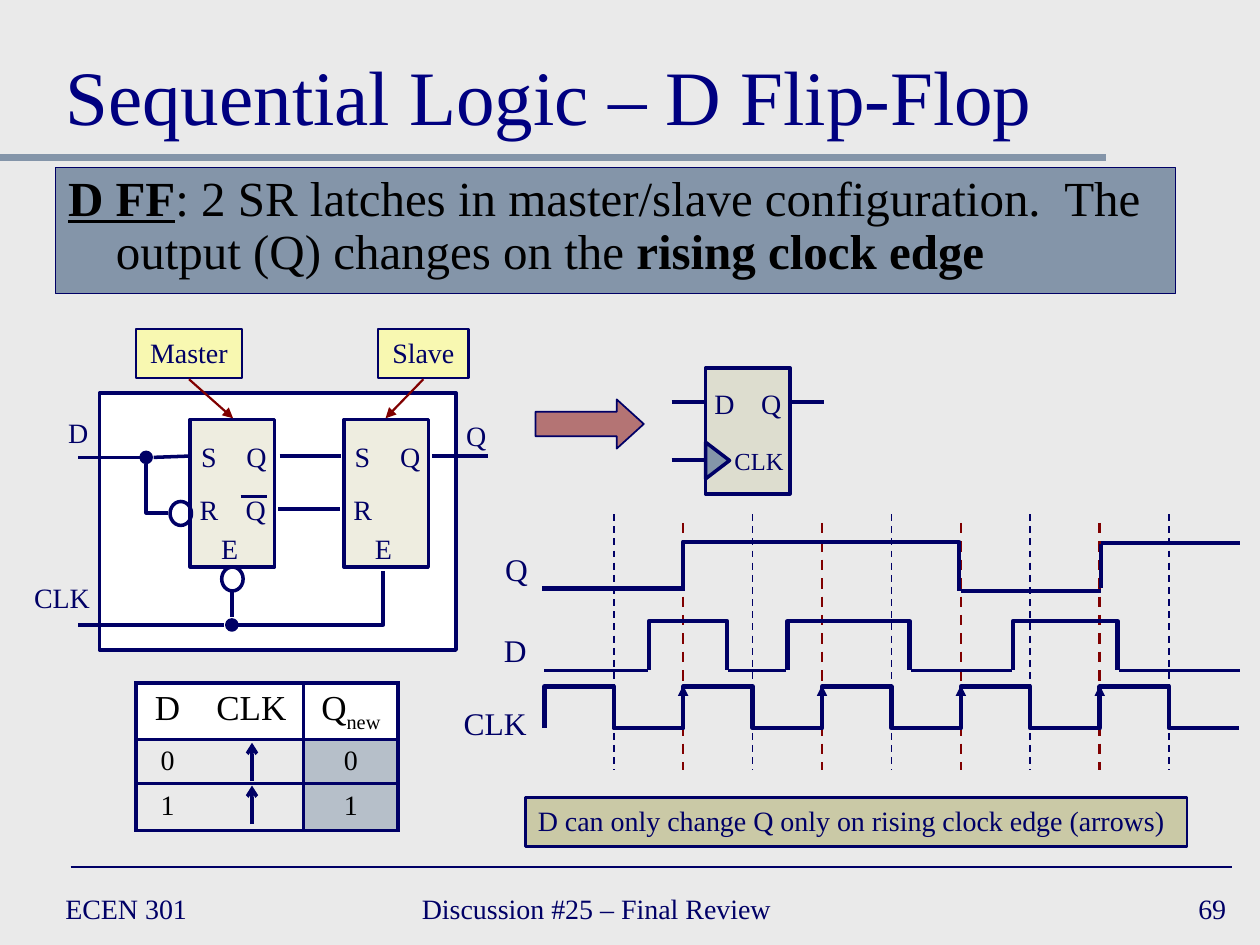
from lxml import etree
from pptx import Presentation
from pptx.dml.color import RGBColor
from pptx.enum.dml import MSO_LINE
from pptx.enum.shapes import MSO_CONNECTOR, MSO_SHAPE
from pptx.enum.text import MSO_ANCHOR, MSO_AUTO_SIZE, PP_ALIGN
from pptx.oxml.ns import qn
from pptx.util import Inches, Pt

RECTANGLE, OVAL = MSO_SHAPE.RECTANGLE, MSO_SHAPE.OVAL
TRIANGLE, RIGHT_ARROW = MSO_SHAPE.ISOSCELES_TRIANGLE, MSO_SHAPE.RIGHT_ARROW
STRAIGHT, DASH = MSO_CONNECTOR.STRAIGHT, MSO_LINE.DASH
LEFT, CENTER, RIGHT = PP_ALIGN.LEFT, PP_ALIGN.CENTER, PP_ALIGN.RIGHT
TOP, MIDDLE, BOTTOM = MSO_ANCHOR.TOP, MSO_ANCHOR.MIDDLE, MSO_ANCHOR.BOTTOM

FONT = "Times New Roman"
COLORS = {"page": "EAEAEA", "navy": "000066", "title": "000080", "slate": "8495A9",
          "maroon": "800000", "olive": "ABA964", "yellow": "FFFF99",
          "white": "FFFFFF", "black": "000000"}
# Letter widths as shares of the text size, for boxes that hug their label
ADVANCE = {"C": 0.67, "D": 0.72, "E": 0.61, "K": 0.72, "L": 0.61,
           "Q": 0.72, "R": 0.67, "S": 0.56}
NO_TABLE_STYLE = "{2D5ABB26-0587-4C30-8999-92F81FD0307C}"

# The slide is a grid of 100 columns and 75 rows; the clock has ten half periods
CELL = Inches(0.1)
CLOCK_LEFT, HALF_PERIOD = 43.2, 5.51


def grid(*values):
    return [round(CELL * value) for value in values]


def clock_column(step):
    return CLOCK_LEFT + HALF_PERIOD * step


def color(name):
    return RGBColor.from_string(COLORS[name])


def add_span(para, text, size, name="navy", bold=None, underline=None):
    span = para.add_run()
    span.text = text
    font = span.font
    font.name, font.size, font.bold, font.underline = FONT, Pt(size), bold, underline
    font.color.rgb = color(name)
    return span


def paint(fill, name, opacity=100):
    fill.solid()
    fill.fore_color.rgb = color(name)
    if opacity < 100:
        tint = fill._xPr.find(qn("a:solidFill"))[0]
        etree.SubElement(tint, qn("a:alpha"), val=str(opacity * 1000))


def outline(line, name, width):
    line.color.rgb = color(name)
    line.width = Pt(width)


def add_box(page, kind, place, fill=None, opacity=100, width=2):
    box = page.shapes.add_shape(kind, *grid(*place))
    box.shadow.inherit = False
    if fill:
        paint(box.fill, fill, opacity)
    else:
        box.fill.background()
    outline(box.line, "navy", width)
    return box


def write(box, text, size=16, align=CENTER, anchor=TOP, wrap=False):
    frame = box.text_frame
    frame.word_wrap, frame.vertical_anchor = wrap, anchor
    para = frame.paragraphs[0]
    para.alignment = align
    add_span(para, text, size)


def add_label(page, text, left, top, size=16):
    width = 2 + sum(ADVANCE[letter] for letter in text) * size / 7.2
    height = 1 + 1.2 * size / 7.2
    write(page.shapes.add_textbox(*grid(left, top, width, height)), text, size)


def add_line(page, start, end, width=2, name="navy", head=None, dash=None):
    line = page.shapes.add_connector(STRAIGHT, *grid(*start, *end))
    outline(line.line, name, width)
    if dash:
        line.line.dash_style = dash
    if head:
        etree.SubElement(line.line._get_or_add_ln(), qn("a:tailEnd"), type=head)
    etree.SubElement(line._element.spPr, qn("a:effectLst"))


def add_path(page, points, width=2.5):
    corners = [grid(*point) for point in points]
    builder = page.shapes.build_freeform(*corners[0])
    builder.add_line_segments(corners[1:], close=False)
    path = builder.convert_to_shape()
    path.shadow.inherit = False
    path.fill.background()
    outline(path.line, "navy", width)


def place_placeholder(holder, place, anchor):
    holder.left, holder.top, holder.width, holder.height = grid(*place)
    frame = holder.text_frame
    frame.auto_size, frame.vertical_anchor = MSO_AUTO_SIZE.NONE, anchor
    frame.paragraphs[0].alignment = LEFT
    return frame.paragraphs[0]


def add_heading(page):
    para = place_placeholder(page.shapes.title, (4.2, 1.7, 91.7, 10), BOTTOM)
    add_span(para, "Sequential Logic – D Flip-Flop", 44, "title")

    body = page.placeholders[1]
    para = place_placeholder(body, (4.4, 13.3, 88.9, 10), TOP)
    paint(body.fill, "slate")
    outline(body.line, "navy", 0.75)
    layout = para._p.get_or_add_pPr()
    layout.set("marL", str(Inches(0.38)))
    layout.set("indent", str(-Inches(0.38)))
    etree.SubElement(layout, qn("a:buNone"))
    para.line_spacing, para.space_before = 0.9, Pt(0)
    add_span(para, "D FF", 28, "black", True, True)
    add_span(para, ": 2 SR latches in master/slave configuration.  "
             "The output (Q) changes on the ", 28, "black", False)
    add_span(para, "rising clock edge", 28, "black", True)


def add_footer(page):
    add_line(page, (0, 12.5), (87.8, 12.5), 4, "slate")
    add_line(page, (5.6, 68.8), (97.8, 68.8), 1)
    for text, left, width, align in (("ECEN 301", 4.2, 21.7, LEFT),
                                     ("Discussion #25 – Final Review", 32.5, 38.3, LEFT),
                                     ("69", 77.5, 20.8, RIGHT)):
        box = page.shapes.add_textbox(*grid(left, 70, width, 4.2))
        write(box, text, 16, align, MIDDLE, True)


def add_border(cell, sides):
    properties = cell._tc.get_or_add_tcPr()
    for index, side in enumerate(sides):
        line = etree.Element(qn("a:ln" + side), w=str(Pt(2.25)))
        fill = etree.SubElement(line, qn("a:solidFill"))
        etree.SubElement(fill, qn("a:srgbClr"), val=COLORS["navy"])
        properties.insert(index, line)


def add_truth_table(page):
    rows = (("D", "CLK", "Q"), ("0", "", "0"), ("1", "", "1"))
    table = page.shapes.add_table(3, 3, *grid(10.8, 54.2, 20.8, 11.7)).table
    table._tbl.tblPr.find(qn("a:tableStyleId")).text = NO_TABLE_STYLE
    table.first_row = table.horz_banding = False
    for column, width in zip(table.columns, grid(5, 8.3, 7.5)):
        column.width = width
    for row, height in zip(table.rows, grid(4.5, 3.5, 3.7)):
        row.height = height
    for r, texts in enumerate(rows):
        for c, text in enumerate(texts):
            cell = table.cell(r, c)
            cell.margin_top, cell.margin_bottom = Inches(0.05 if text else 0), 0
            if r == 0:
                paint(cell.fill, "white")
            elif c == 2:
                paint(cell.fill, "slate", 50)
            else:
                cell.fill.background()
            add_border(cell, [side for side, drawn in (
                ("L", c != 1), ("R", c > 0), ("T", r < 2), ("B", r != 1)) if drawn])
            para = cell.text_frame.paragraphs[0]
            para.alignment = CENTER
            if text:
                add_span(para, text, 16 if r else 20, "black")
    header = table.cell(0, 2).text_frame.paragraphs[0]
    add_span(header, "new", 20, "black").font._rPr.set("baseline", "-25000")
    for bottom in (62, 65.4):
        add_line(page, (20, bottom), (20, bottom - 3.05), head="arrow")


def add_symbol(page):
    arrow = add_box(page, RIGHT_ARROW, (42.5, 31.7, 8.6, 3.9), "maroon", 50, 1)
    arrow.adjustments[1] = 0.55
    add_box(page, RECTANGLE, (56, 29.2, 6.7, 10), "olive", 20)
    add_box(page, TRIANGLE, (55.5, 35.6, 2.9, 1.9), "slate").rotation = 90
    for left, row in ((53.3, 31.9), (53.3, 36.5), (62.7, 31.9)):
        add_line(page, (left, row), (left + 2.7, row))
    add_label(page, "D", 55.7, 30.2)
    add_label(page, "Q", 59.4, 30.2)
    add_label(page, "CLK", 57.3, 34.9, 14)


def add_latch(page, left):
    add_box(page, RECTANGLE, (left, 33.3, 6.7, 11.7), "olive", 20)
    for text, across, top in (("S", -0.15, 34.4), ("Q", 3.45, 34.4),
                              ("R", -0.25, 38.6), ("E", 1.45, 41.7)):
        add_label(page, text, left + across, top)


def add_circuit(page):
    add_box(page, RECTANGLE, (7.9, 31.2, 28.3, 20.4), "white")
    for left in (15.1, 27.3):
        add_latch(page, left)
    # Inverted output, inverter bubbles and junction dots
    add_label(page, "Q", 18.5, 38.6)
    add_line(page, (19.1, 39.4), (21.2, 39.4), 1.5)
    for left, top in ((17.6, 45), (13.5, 39.8)):
        add_box(page, OVAL, (left, top, 1.7, 1.9))
    for left, top in ((18, 49.2), (11.2, 35.9)):
        add_box(page, OVAL, (left, top, 0.8, 0.8), "navy")
    # Wires
    for start, end in (((18.4, 47), (18.4, 49)), ((12.2, 36.3), (15, 36.2)),
                       ((22.1, 40.4), (27, 40.4)), ((22.2, 36.2), (27.1, 36.2)),
                       ((17.8, 49.6), (6.2, 49.6)), ((11.1, 36.3), (6.2, 36.3)),
                       ((34.3, 36.2), (38.7, 36.2))):
        add_line(page, start, end)
    add_path(page, ((18.9, 49.6), (30.4, 49.6), (30.4, 45.3)), 2)
    add_path(page, ((13.3, 40.7), (11.6, 40.7), (11.6, 36.8)), 2)
    for text, left, top in (("CLK", 1.7, 45.6), ("D", 4.4, 32.5), ("Q", 36, 32.7)):
        add_label(page, text, left, top)
    # Callouts
    for text, left, width, tip in (("Master", 10.8, 8.4, 18.5), ("Slave", 30, 7.2, 30.6)):
        write(add_box(page, RECTANGLE, (left, 26.1, width, 3.9), "yellow", 70, 1.5), text)
        add_line(page, (left + width / 2, 30.1), (tip, 33.2), 1.25, "maroon", "triangle")


def add_timing(page):
    for text, left, top in (("Q", 39.1, 43.2), ("D", 39, 49.6), ("CLK", 35.8, 55.4)):
        add_label(page, text, left, top, 18)
    # Clock edges: rising ones have arrows
    for step in range(1, 10):
        column = clock_column(step)
        if step % 2:
            add_line(page, (column, 40.8), (column, 61.1), 1, dash=DASH)
        else:
            add_line(page, (column, 41.5), (column, 61.1), 1.5, "maroon", dash=DASH)
            add_line(page, (column, 57.7), (column, 54.4), 1.25, head="triangle")
    # Clock wave
    wave = [(CLOCK_LEFT, 57.8)]
    for step in range(10):
        row = 57.8 if step % 2 else 54.5
        wave += [(clock_column(step), row), (clock_column(step + 1), row)]
    add_path(page, wave)
    # D wave: pulses with low stretches between them
    low_from = CLOCK_LEFT
    for rise, fall in ((51.5, 57.7), (62.5, 72.2), (80.4, 88.7)):
        add_path(page, ((rise, 53.2), (rise, 49.3), (fall, 49.3), (fall, 53.2)))
        add_line(page, (low_from, 53.2), (rise - 0.1, 53.2))
        low_from = fall + 0.1
    add_line(page, (low_from, 53.2), (98.4, 53.2))
    # Q wave
    add_path(page, ((54.2, 46.9), (54.2, 43), (76.1, 43), (76.1, 46.9)))
    for start, end in (((54.1, 46.7), (43, 46.7)), ((76.3, 46.9), (87.4, 46.9)),
                       ((87.4, 46.7), (87.4, 43.2)), ((87.4, 43.1), (98.4, 43.1))):
        add_line(page, start, end, 2.5)
    note = add_box(page, RECTANGLE, (41.7, 63.3, 52.5, 3.9), "olive", 50, 1.5)
    write(note, "D can only change Q only on rising clock edge (arrows)", align=LEFT, wrap=True)


def main():
    deck = Presentation()
    deck.slide_width, deck.slide_height = grid(100, 75)
    page = deck.slides.add_slide(deck.slide_layouts[1])
    paint(page.background.fill, "page")
    add_footer(page)
    add_heading(page)
    add_truth_table(page)
    add_symbol(page)
    add_circuit(page)
    add_timing(page)
    deck.save("out.pptx")


if __name__ == "__main__":
    main()
